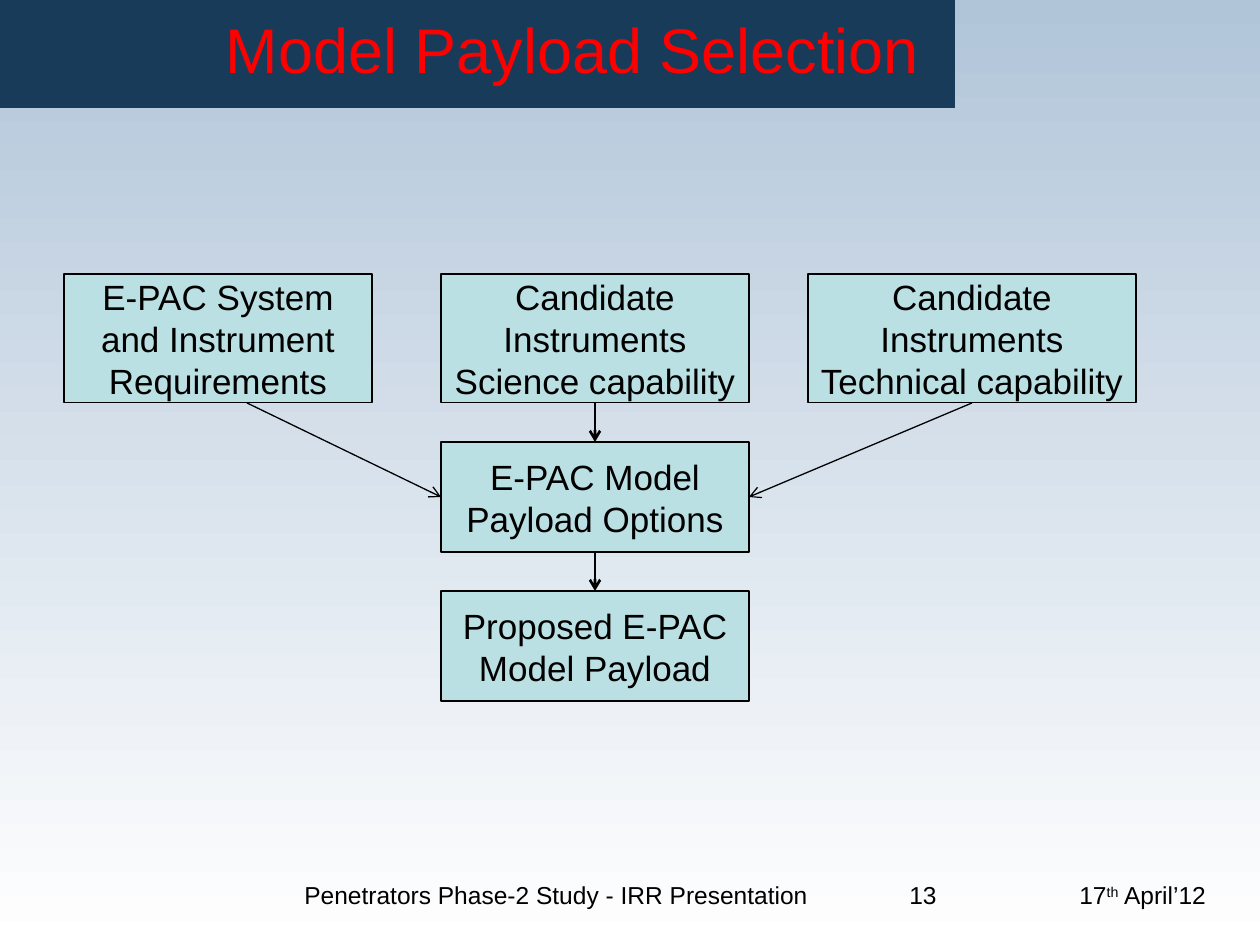
"""Build the payload selection slide, with its flow of boxes and arrows."""
import dataclasses

import pptx
import pptx.dml.color
import pptx.enum.shapes
import pptx.enum.text
import pptx.oxml
import pptx.oxml.ns
import pptx.util

SCALE = 914400 / 126
ALIGN = pptx.enum.text.PP_ALIGN
ANCHOR = pptx.enum.text.MSO_ANCHOR
BOTTOM, LEFT, TOP, RIGHT = 2, 1, 0, 3


@dataclasses.dataclass(frozen=True)
class Theme:
    font: str = "Arial"
    sky: str = "B1C5D9"
    white: str = "FFFFFF"
    band: str = "193B5A"
    box: str = "BBE0E3"
    ink: str = "000000"
    title: str = "FF0000"
    head: int = 36
    body: int = 20
    foot: int = 14
    thin: float = 0.75
    thick: float = 1.5


THEME = Theme()


def px(*sizes):
    return [pptx.util.Emu(round(size * SCALE)) for size in sizes]


def rgb(code):
    return pptx.dml.color.RGBColor.from_string(code)


def node(tag, **attrs):
    item = pptx.oxml.parse_xml(f"<a:{tag} {pptx.oxml.ns.nsdecls('a')}/>")
    for name, value in attrs.items():
        item.set(name, str(value))
    return item


def say(frame, text, size=THEME.body, color=THEME.ink, align=ALIGN.CENTER,
        anchor=ANCHOR.MIDDLE, tabs=()):
    frame.word_wrap = True
    frame.auto_size = pptx.enum.text.MSO_AUTO_SIZE.NONE
    frame.vertical_anchor = anchor
    for row, line in enumerate(text.split("\n")):
        para = frame.add_paragraph() if row else frame.paragraphs[0]
        para.alignment = align
        if tabs:
            stops = node("tabLst")
            for stop in px(*tabs):
                stops.append(node("tab", pos=stop, algn="l"))
            para._p.get_or_add_pPr().append(stops)
        for part, words in enumerate(line.split("^")):
            run = para.add_run()
            run.text = words
            run.font.name = THEME.font
            run.font.size = pptx.util.Pt(size)
            run.font.color.rgb = rgb(color)
            if part % 2:
                run._r.get_or_add_rPr().set("baseline", "30000")


def block(slide, place, fill, edge=None):
    kind = pptx.enum.shapes.MSO_SHAPE.RECTANGLE
    shape = slide.shapes.add_shape(kind, *px(*place))
    shape.shadow.inherit = False
    shape.fill.solid()
    shape.fill.fore_color.rgb = rgb(fill)
    if edge:
        shape.line.color.rgb = rgb(edge)
        shape.line.width = pptx.util.Pt(THEME.thin)
    else:
        shape.line.fill.background()
    return shape


def box(slide, place, text):
    shape = block(slide, place, THEME.box, THEME.ink)
    say(shape.text_frame, text)
    return shape


def arrow(slide, end, side, source=None, start=(0, 0), width=THEME.thin):
    kind = pptx.enum.shapes.MSO_CONNECTOR.STRAIGHT
    line = slide.shapes.add_connector(kind, *px(*start, *start))
    if source:
        line.begin_connect(source, BOTTOM)
    line.end_connect(end, side)
    line.line.color.rgb = rgb(THEME.ink)
    line.line.width = pptx.util.Pt(width)
    line.line._get_or_add_ln().append(node("tailEnd", type="arrow"))
    line._element.spPr.append(node("effectLst"))


def backdrop(slide):
    fill = slide.background.fill
    fill.gradient()
    fill.gradient_angle = 270
    for stop, color, spot in zip(fill.gradient_stops, (THEME.sky, THEME.white), (0, 1)):
        stop.color.rgb = rgb(color)
        stop.position = spot


def header(slide, text):
    title = slide.shapes.title
    title.left, title.top, title.width, title.height = px(39, 1, 1067, 95)
    say(title.text_frame, text, size=THEME.head, color=THEME.title)
    band = block(slide, (0, 0, 955, 108), THEME.band)
    title.element.addprevious(band.element)


def footer(slide, text):
    note = slide.shapes.add_textbox(*px(292, 874, 956, 43))
    say(note.text_frame, text, size=THEME.foot, align=ALIGN.LEFT,
        anchor=ANCHOR.TOP, tabs=(605, 775))


def flow(slide):
    top, tall, wide, mid = 274, 129, 308, 441
    short, gap = 110, 39
    next_top = top + tall + gap
    needs = box(slide, (64, top, wide, tall), "E-PAC System and Instrument Requirements")
    science = box(slide, (mid, top, wide, tall), "Candidate Instruments\nScience capability")
    tech = box(slide, (808, top, 328, tall), "Candidate Instruments\nTechnical capability")
    options = box(slide, (mid, next_top, wide, short), "E-PAC Model Payload Options")
    final = box(slide, (mid, next_top + short + gap, wide, short),
                "Proposed E-PAC Model Payload")
    arrow(slide, options, LEFT, start=(247, top + tall))
    arrow(slide, options, RIGHT, source=tech)
    arrow(slide, options, TOP, source=science, width=THEME.thick)
    arrow(slide, final, TOP, source=options, width=THEME.thick)


def main():
    deck = pptx.Presentation()
    deck.slide_width, deck.slide_height = px(1260, 945)
    slide = deck.slides.add_slide(deck.slide_layouts[5])
    backdrop(slide)
    header(slide, "Model Payload Selection")
    flow(slide)
    footer(slide, "Penetrators Phase-2 Study - IRR Presentation\t13\t17^th^ April’12")
    deck.save("out.pptx")


if __name__ == "__main__":
    main()
